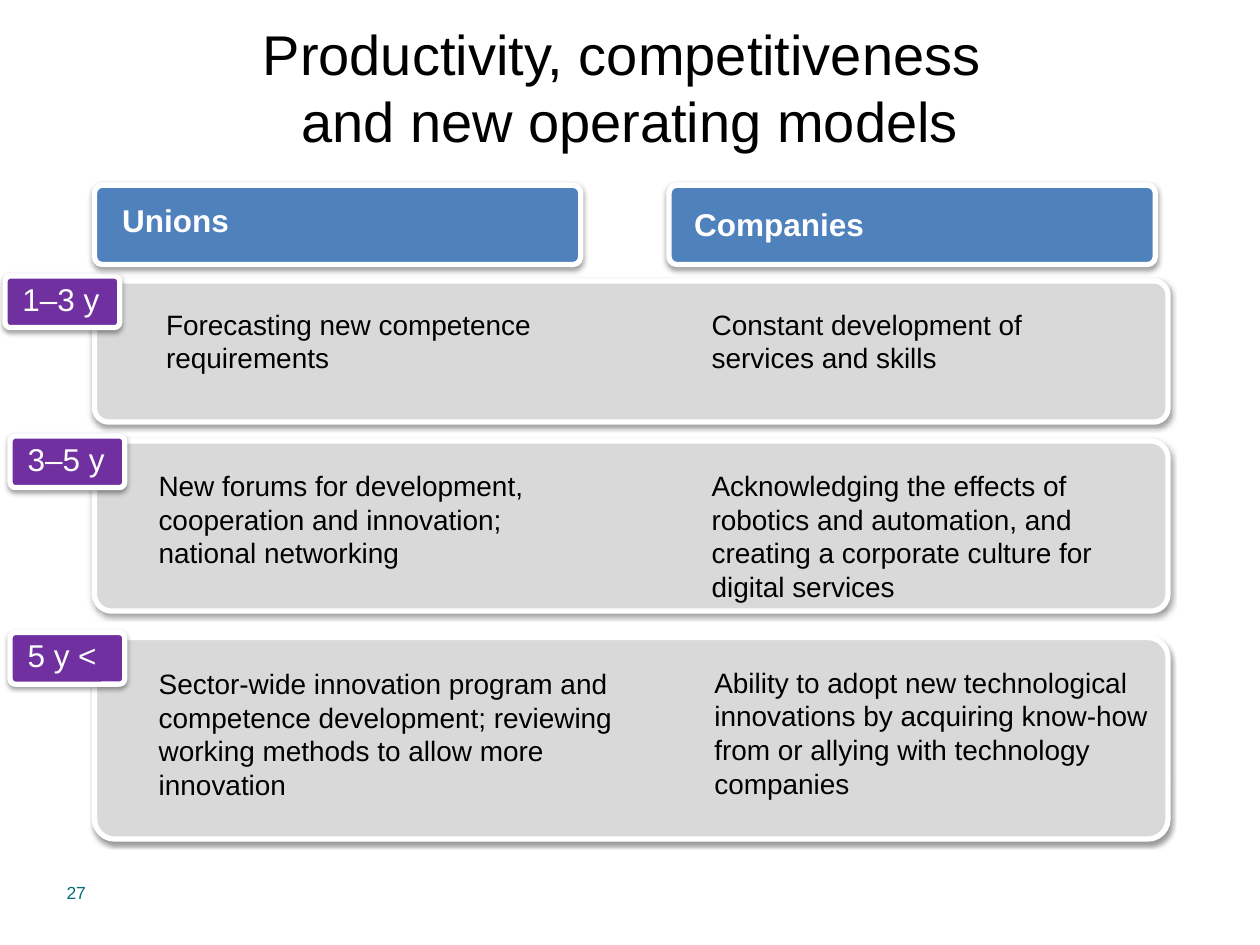
"""Build the slide on productivity, competitiveness and new operating models."""
from lxml import etree
from pptx import Presentation
from pptx import util as u
from pptx.dml.color import RGBColor
from pptx.enum import shapes, text
from pptx.oxml import ns

TITLE = "Productivity, competitiveness \vand new operating models"
PAGE = "27"
HEADINGS = [
    {"text": "Unions", "left": 0.75, "box": (0.93, 1.47, 2.68, 0.59)},
    {"text": "Companies", "left": 5.31, "box": (5.47, 1.5, 2.6, 0.59)},
]
PERIODS = [
    {"tag": "1–3 y", "top": 2.23, "height": 1.12, "tag_left": 0.04, "inset": (0.1, 0.05),
     "cells": [("Forecasting new competence requirements", 1.22, 2.39, 3.39),
               ("Constant development of \vservices and skills", 5.55, 2.39, 3.39)]},
    {"tag": "3–5 y", "top": 3.5, "height": 1.35, "tag_left": 0.08, "inset": (0.1, 0.05),
     "cells": [("New forums for development, cooperation and innovation; national networking",
                1.16, 3.67, 3.39),
               ("Acknowledging the effects of robotics and automation, and creating a "
                "corporate culture for digital services", 5.55, 3.67, 3.7)]},
    {"tag": "5 y <", "top": 5.06, "height": 1.6, "tag_left": 0.08, "inset": (0.04, 0.04),
     "cells": [("Sector-wide innovation program and competence development; reviewing "
                "working methods to allow more innovation", 1.22, 5.25, 3.7),
               ("Ability to adopt new technological innovations by acquiring know-how "
                "from or allying with technology companies", 5.63, 5.24, 3.54)]},
]
COLORS = {"card": "D9D9D9", "tag": "7030A0", "heading": "4F81BD",
          "white": "FFFFFF", "black": "000000", "page": "076E75"}
CARD_LEFT, CARD_WIDTH = 0.75, 8.52
HEADING_TOP, HEADING_WIDTH, HEADING_HEIGHT = 1.47, 3.86, 0.63
TAG_WIDTH, TAG_HEIGHT, TAG_RISE = 0.91, 0.41, 0.04


def color(name):
    return RGBColor.from_string(COLORS[name])


def add_shadow(sp):
    effects = etree.SubElement(sp._element.spPr, ns.qn("a:effectLst"))
    shadow = etree.SubElement(effects, ns.qn("a:outerShdw"), blurRad=str(u.Pt(3.1)),
                              dist=str(u.Pt(1.6)), dir="5400000", rotWithShape="0")
    black = etree.SubElement(shadow, ns.qn("a:srgbClr"), val=COLORS["black"])
    etree.SubElement(black, ns.qn("a:alpha"), val="38000")


def add_panel(parent, box, fill):
    sp = parent.add_shape(shapes.MSO_SHAPE.ROUNDED_RECTANGLE, *map(u.Inches, box))
    sp.adjustments[0] = 0.1
    sp.fill.solid()
    sp.fill.fore_color.rgb = color(fill)
    sp.line.color.rgb = color("white")
    sp.line.width = u.Pt(3)
    add_shadow(sp)


def add_text(parent, box, words, size, ink="black", bold=False, inset=(0.1, 0.05),
             spacing=None, align=None, **frame):
    tf = parent.add_textbox(*map(u.Inches, box)).text_frame
    x, y = map(u.Inches, inset)
    settings = {"margin_left": x, "margin_right": x, "margin_top": y,
                "margin_bottom": y, "word_wrap": True, **frame}
    for name, value in settings.items():
        setattr(tf, name, value)
    p = tf.paragraphs[0]
    p.text = words
    p.alignment, p.line_spacing = align, spacing
    for r in p.runs:
        for name, value in {"name": "Arial", "size": u.Pt(size), "bold": bold}.items():
            setattr(r.font, name, value)
        r.font.color.rgb = color(ink)


def main():
    prs = Presentation()
    prs.slide_width, prs.slide_height = u.Inches(10), u.Inches(7.5)
    s = prs.slides.add_slide(prs.slide_layouts[6])
    middle = text.MSO_ANCHOR.MIDDLE

    add_text(s.shapes, (0.5, 0.06, 9, 1.25), TITLE, 32,
             align=text.PP_ALIGN.CENTER, vertical_anchor=middle)

    for row in PERIODS:
        add_panel(s.shapes, (CARD_LEFT, row["top"], CARD_WIDTH, row["height"]), "card")

    for row in PERIODS:
        left, top = row["tag_left"], row["top"] - TAG_RISE
        tag = s.shapes.add_group_shape().shapes
        add_panel(tag, (left, top, TAG_WIDTH, TAG_HEIGHT), "tag")
        add_text(tag, (left + 0.04, top - 0.02, 0.82, 0.4), row["tag"], 18, "white",
                 word_wrap=False, auto_size=text.MSO_AUTO_SIZE.SHAPE_TO_FIT_TEXT)
        for words, x, y, width in row["cells"]:
            height = row["top"] + row["height"] - y
            add_text(s.shapes, (x, y, width, height), words, 16, inset=row["inset"])

    for head in HEADINGS:
        add_panel(s.shapes, (head["left"], HEADING_TOP, HEADING_WIDTH, HEADING_HEIGHT),
                  "heading")
        add_text(s.shapes, head["box"], head["text"], 18, "white", bold=True,
                 inset=(0.04, 0.04), spacing=0.9, vertical_anchor=middle)

    add_text(s.shapes, (0.43, 6.95, 2.33, 0.4), PAGE, 10, "page")
    prs.save("out.pptx")


if __name__ == "__main__":
    main()
